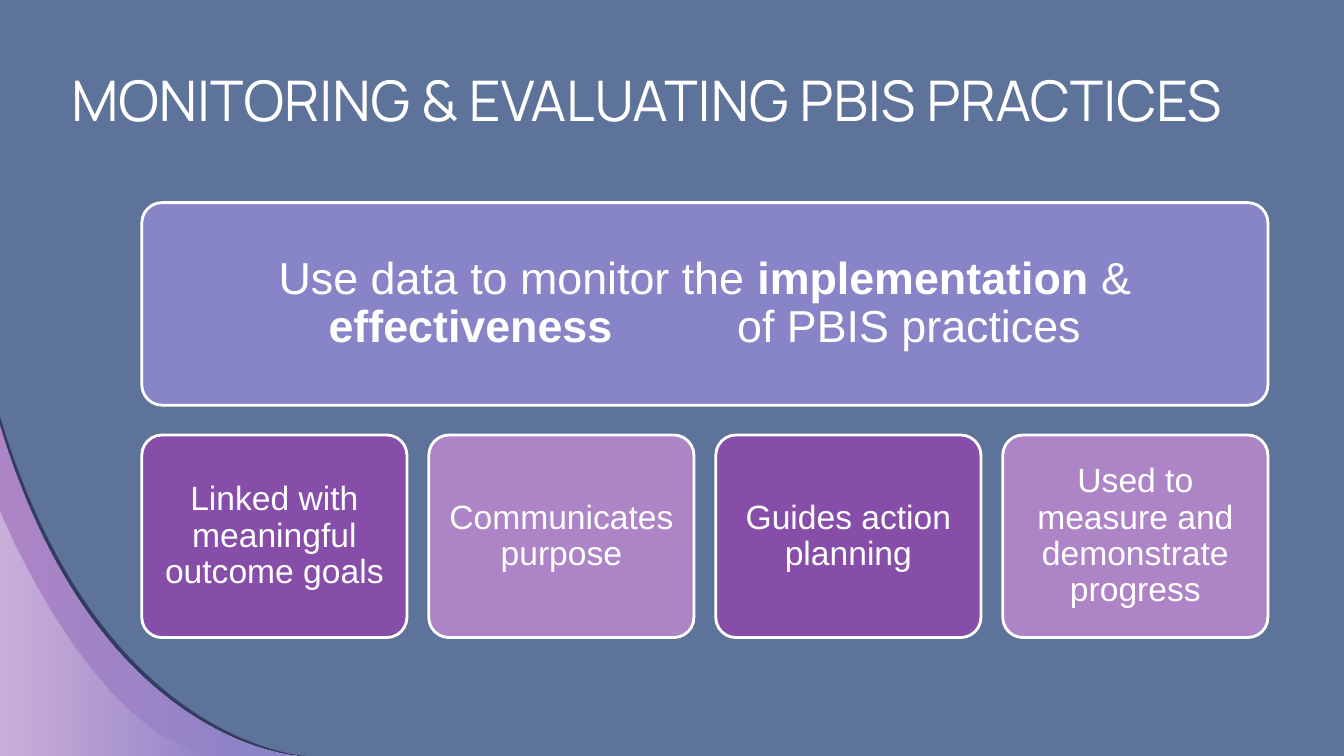
from pptx import Presentation
from pptx import util as u
from pptx.dml.color import RGBColor
from pptx.enum import shapes, text
from pptx.oxml import parse_xml
from pptx.oxml.ns import qn, nsdecls

Pt = u.Pt
WHITE = RGBColor(0xFF, 0xFF, 0xFF)
SLATE = RGBColor(0x5D, 0x73, 0x9A)
NAVY = RGBColor(0x12, 0x10, 0x2F)
BLUE = RGBColor(0x87, 0x84, 0xC7)
PLUM = RGBColor(0x87, 0x4E, 0xA9)
LILAC = RGBColor(0xAD, 0x84, 0xC6)

deck = Presentation()
deck.slide_width, deck.slide_height = Pt(960), Pt(540)
slide = deck.slides.add_slide(deck.slide_layouts[6])
slide.background.fill.solid()
slide.background.fill.fore_color.rgb = SLATE


def write(shape, parts, size=24, font="Arial", align=text.PP_ALIGN.CENTER,
          inset=7.2, lines=0.9):
    """Fill a shape with runs, each given as (words, bold, tracking in points)."""
    frame = shape.text_frame
    frame.word_wrap = True
    frame.vertical_anchor = text.MSO_ANCHOR.MIDDLE
    frame.margin_left = frame.margin_right = Pt(inset)
    frame.margin_top = frame.margin_bottom = Pt(inset)
    para = frame.paragraphs[0]
    para.alignment, para.line_spacing = align, lines
    for words, bold, track in parts:
        run = para.add_run()
        run.text = words
        run.font.size, run.font.name, run.font.bold = Pt(size), font, bold
        run.font.color.rgb = WHITE
        if track:
            run._r.get_or_add_rPr().set("spc", str(track * 100))


# Corner swoosh: Bezier edge from the left side to the bottom, stops (colour, opacity %)
swoosh = [
    ([(0, 297.4), (70.6, 532), (218.2, 540), (218.2, 540)], [(NAVY, 54)]),
    ([(0, 303.8), (68.4, 532), (212.4, 540), (212.4, 540)], [(LILAC, 100), (BLUE, 100)]),
    ([(0, 364.3), (0, 364.3), (65.5, 529), (155.5, 540)], [(WHITE, 36), (WHITE, 0)]),
]
FINE = 100
for curve, stops in swoosh:
    dots = [(x * FINE, y * FINE) for x, y in curve + [(0, 540)]]
    edge = slide.shapes.build_freeform(*dots[0], scale=Pt(1) / FINE)
    edge.add_line_segments(dots[1:], close=True)
    wave = edge.convert_to_shape()
    wave.shadow.inherit = False
    wave.line.fill.background()

    # Turn the first three segments into one cubic curve
    legs = list(wave._element.spPr.iter(qn("a:lnTo")))[:3]
    bend = parse_xml(f'<a:cubicBezTo {nsdecls("a")}/>')
    legs[0].addprevious(bend)
    for leg in legs:
        bend.append(leg[0])
        leg.getparent().remove(leg)

    if len(stops) == 1:
        wave.fill.solid()
        wave.fill.fore_color.rgb = stops[0][0]
    else:
        wave.fill.gradient()
        wave.fill.gradient_angle = 0
        for stop, (tint, _) in zip(wave.fill.gradient_stops, stops):
            stop.color.rgb = tint
    tints = list(wave._element.spPr.iter(qn("a:srgbClr")))
    for node, (_, alpha) in zip(tints, stops):
        if alpha < 100:
            node.append(parse_xml(f'<a:alpha {nsdecls("a")} val="{alpha * 1000}"/>'))

# Cards: one wide banner above a row of four
LEFT, WIDE, HIGH, STEP = 101.3, 189.4, 144.7, 205
banner = [
    ("Use data to monitor the ", False, 0), ("implementation", True, 0),
    (" & ", False, 0), ("effectiveness", True, 0),
    (" ", False, 80), ("of PBIS practices", False, 0),
]
cards = [(LEFT, 144.7, 3 * STEP + WIDE, BLUE, banner, 32, 9.6)]
goals = ["Linked with meaningful outcome goals", "Communicates purpose",
         "Guides action planning", "Used to measure and demonstrate progress"]
for i, goal in enumerate(goals):
    cards.append((LEFT + i * STEP, 310.7, WIDE, (PLUM, LILAC)[i % 2],
                  [(goal, False, 0)], 24, 7.2))

for x, y, w, tint, parts, size, inset in cards:
    card = slide.shapes.add_shape(shapes.MSO_SHAPE.ROUNDED_RECTANGLE,
                                  Pt(x), Pt(y), Pt(w), Pt(HIGH))
    card.adjustments[0] = 0.1
    card.shadow.inherit = False
    card.fill.solid()
    card.fill.fore_color.rgb = tint
    card.line.color.rgb, card.line.width = WHITE, Pt(2)
    write(card, parts, size=size, inset=inset)

# Title
title = slide.shapes.add_textbox(Pt(43.9), Pt(37.5), Pt(872), Pt(66.2))
write(title, [("MONITORING & EVALUATING PBIS PRACTICES", False, 0)],
      size=40, font="Manrope", align=text.PP_ALIGN.LEFT, lines=1)

deck.save("out.pptx")
